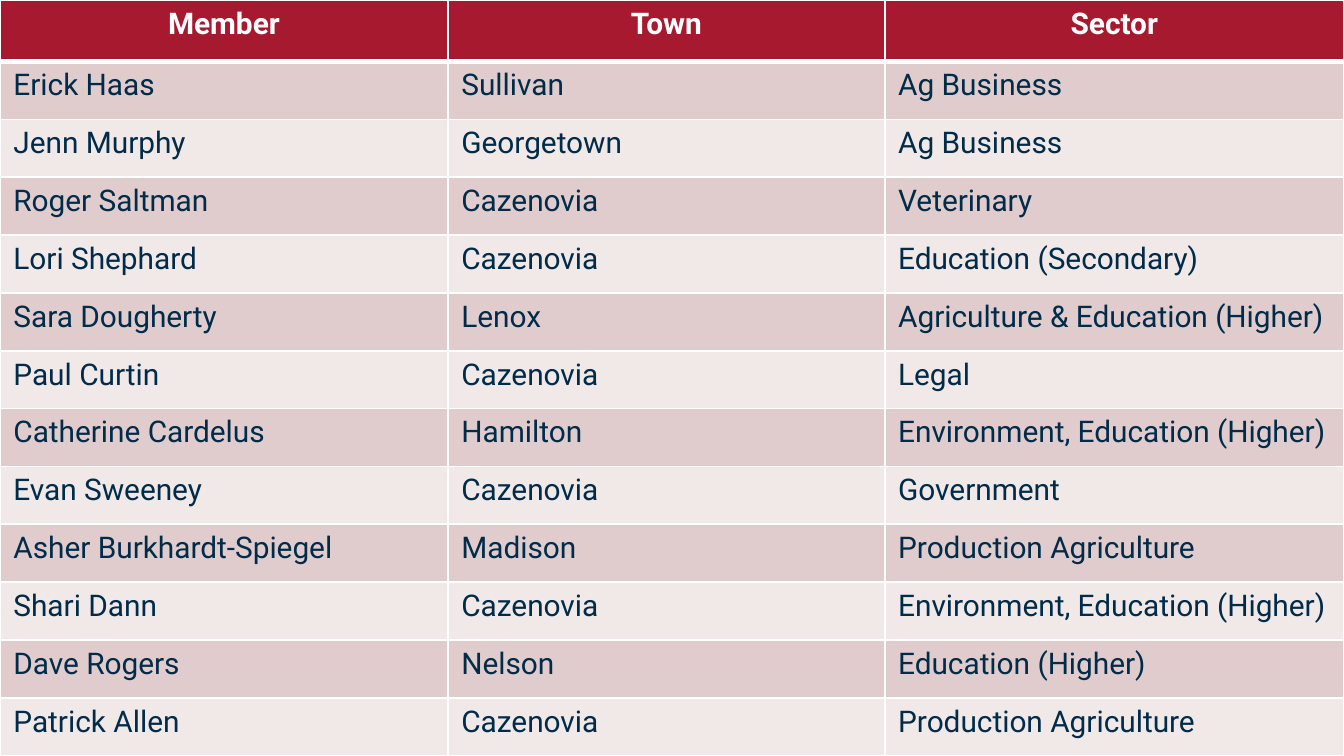
from lxml.etree import SubElement
from pptx import Presentation
from pptx.dml.color import RGBColor
from pptx.enum.text import MSO_ANCHOR, PP_ALIGN
from pptx.oxml.ns import qn
from pptx.util import Pt

COLORS = {
    "header": "A6192E",
    "odd_row": "E1CCCD",
    "even_row": "F1E8E8",
    "text": "002B49",
    "white": "FFFFFF",
}
FONT = "Roboto"
COLUMN_WIDTHS = [240, 234, 246]
HEADER_HEIGHT, ROW_HEIGHT = 33, 31
HEADINGS = ("Member", "Town", "Sector")
MEMBERS = [
    ("Erick Haas", "Sullivan", "Ag Business"),
    ("Jenn Murphy", "Georgetown", "Ag Business"),
    ("Roger Saltman", "Cazenovia", "Veterinary"),
    ("Lori Shephard", "Cazenovia", "Education (Secondary)"),
    ("Sara Dougherty", "Lenox", "Agriculture & Education (Higher)"),
    ("Paul Curtin", "Cazenovia", "Legal"),
    ("Catherine Cardelus", "Hamilton", "Environment, Education (Higher)"),
    ("Evan Sweeney", "Cazenovia", "Government"),
    ("Asher Burkhardt-Spiegel", "Madison", "Production Agriculture"),
    ("Shari Dann", "Cazenovia", "Environment, Education (Higher)"),
    ("Dave Rogers", "Nelson", "Education (Higher)"),
    ("Patrick Allen", "Cazenovia", "Production Agriculture"),
]


def set_borders(cell, top, bottom):
    """Draw white cell borders; side borders are 1 point wide."""
    properties = cell._tc.get_or_add_tcPr()
    for side, width in (("L", 1), ("R", 1), ("T", top), ("B", bottom)):
        line = SubElement(properties, qn(f"a:ln{side}"), w=str(Pt(width)))
        fill = SubElement(line, qn("a:solidFill"))
        SubElement(fill, qn("a:srgbClr"), val=COLORS["white"])


def fill_cell(cell, text, row_index):
    is_header = row_index == 0
    # The rule below the header is heavier
    set_borders(cell, 3 if row_index == 1 else 1, 3 if is_header else 1)
    band = "header" if is_header else "odd_row" if row_index % 2 else "even_row"
    cell.fill.solid()
    cell.fill.fore_color.rgb = RGBColor.from_string(COLORS[band])
    cell.vertical_anchor = MSO_ANCHOR.TOP

    paragraph = cell.text_frame.paragraphs[0]
    paragraph.alignment = PP_ALIGN.CENTER if is_header else PP_ALIGN.LEFT
    run = paragraph.add_run()
    run.text = text
    run.font.name = FONT
    run.font.size = Pt(16)
    run.font.bold = is_header
    color = COLORS["white" if is_header else "text"]
    run.font.color.rgb = RGBColor.from_string(color)


def add_member_table(slide):
    rows = [HEADINGS, *MEMBERS]
    height = HEADER_HEIGHT + ROW_HEIGHT * len(MEMBERS)
    table = slide.shapes.add_table(
        len(rows), len(HEADINGS), Pt(0), Pt(0), Pt(sum(COLUMN_WIDTHS)), Pt(height)
    ).table
    for column, width in zip(table.columns, COLUMN_WIDTHS):
        column.width = Pt(width)
    for row_index, texts in enumerate(rows):
        table.rows[row_index].height = Pt(ROW_HEIGHT if row_index else HEADER_HEIGHT)
        for column_index, text in enumerate(texts):
            fill_cell(table.cell(row_index, column_index), text, row_index)


def main():
    presentation = Presentation()
    presentation.slide_width, presentation.slide_height = Pt(720), Pt(405)
    # Blank layout: the table covers the whole slide
    slide = presentation.slides.add_slide(presentation.slide_layouts[6])
    add_member_table(slide)
    presentation.save("out.pptx")


if __name__ == "__main__":
    main()
